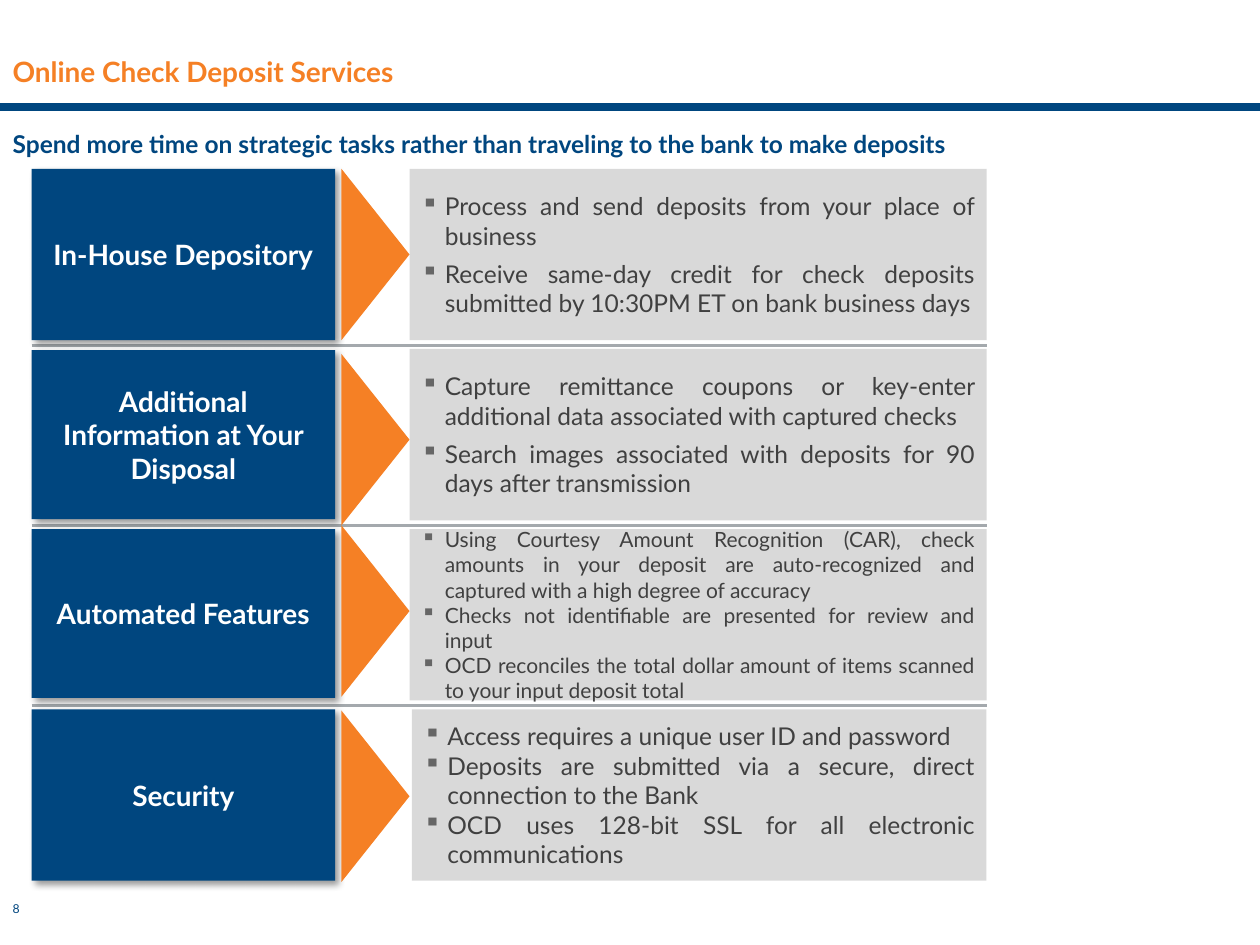
from dataclasses import dataclass

from lxml import etree
from pptx import Presentation
from pptx.dml.color import RGBColor
from pptx.enum import shapes, text
from pptx.oxml import ns
from pptx.util import Inches, Pt


@dataclass(frozen=True)
class Theme:
    font: str = "Lato"
    navy: str = "00467F"
    orange: str = "F58025"
    panel: str = "D9D9D9"
    rule: str = "A4A9AD"
    ink: str = "404040"
    mark: str = "666666"
    white: str = "FFFFFF"
    head: int = 16
    body: int = 14
    dense: int = 12
    note: int = 7


@dataclass(frozen=True)
class Row:
    label: str
    items: tuple
    size: int
    gap: int = 0
    trim: float = 0
    drop: float = 0
    shift: float = 0
    inset: float = 0


THEME = Theme()
TOP, PITCH, TALL = 1.34, 1.43, 1.36
LEFT, RIGHT, WIDE = 0.25, 7.83, 2.41
PANEL, TIP = 3.25, 0.54
ROWS = (
    Row("In-House Depository", (
        "Process and send deposits from your place of business",
        "Receive same-day credit for check deposits submitted by 10:30PM ET on bank business days",
    ), THEME.body, gap=5),
    Row("Additional Information at Your Disposal", (
        "Capture remittance coupons or key-enter additional data associated with captured checks",
        "Search images associated with deposits for 90 days after transmission",
    ), THEME.body, gap=5, trim=0.02, drop=0.01, shift=0.04),
    Row("Automated Features", (
        "Using Courtesy Amount Recognition (CAR), check amounts in your deposit are "
        "auto-recognized and captured with a high degree of accuracy",
        "Checks not identifiable are presented for review and input",
        "OCD reconciles the total dollar amount of items scanned to your input deposit total",
    ), THEME.dense, trim=0.02, shift=-0.03),
    Row("Security", (
        "Access requires a unique user ID and password",
        "Deposits are submitted via a secure, direct connection to the Bank",
        "OCD uses 128-bit SSL for all electronic communications",
    ), THEME.body, shift=0.01, inset=0.02),
)


def box(*sides):
    return [Inches(side) for side in sides]


def tint(name):
    return RGBColor.from_string(name)


def add_run(para, words, size, color, bold=False):
    run = para.add_run()
    run.text = words
    run.font.name = THEME.font
    run.font.size = Pt(size)
    run.font.bold = bold
    run.font.color.rgb = tint(color)


def set_frame(frame, anchor, side=0, edge=0, wrap=True):
    frame.auto_size = text.MSO_AUTO_SIZE.NONE
    frame.word_wrap = wrap
    frame.vertical_anchor = anchor
    frame.margin_left = frame.margin_right = Inches(side)
    frame.margin_top = frame.margin_bottom = Inches(edge)


def add_bullet(para):
    props = para._p.get_or_add_pPr()
    props.set("marL", str(Inches(0.19)))
    props.set("indent", str(-Inches(0.19)))
    color = etree.SubElement(props, ns.qn("a:buClr"))
    etree.SubElement(color, ns.qn("a:srgbClr"), val=THEME.mark)
    etree.SubElement(props, ns.qn("a:buChar"), char="▪")


def add_shadow(shape):
    effects = shape._element.spPr.find(ns.qn("a:effectLst"))
    cast = etree.SubElement(
        effects, ns.qn("a:outerShdw"), blurRad=str(Pt(4)), dist=str(Pt(3)),
        dir=str(45 * 60000), algn="tl", rotWithShape="0")
    color = etree.SubElement(cast, ns.qn("a:srgbClr"), val="000000")
    etree.SubElement(color, ns.qn("a:alpha"), val="40000")


def add_block(slide, kind, sides, fill):
    shape = slide.shapes.add_shape(kind, *box(*sides))
    shape.shadow.inherit = False
    shape.fill.solid()
    shape.fill.fore_color.rgb = tint(fill)
    shape.line.fill.background()
    return shape


def add_rule(slide, start, end, y, color, width):
    line = slide.shapes.add_connector(
        shapes.MSO_CONNECTOR.STRAIGHT, *box(start, y, end, y))
    line.line.color.rgb = tint(color)
    line.line.width = Pt(width)
    etree.SubElement(line._element.spPr, ns.qn("a:effectLst"))


def fill_holder(holder, sides, words, size, color, anchor):
    holder.left, holder.top, holder.width, holder.height = box(*sides)
    set_frame(holder.text_frame, anchor)
    para = holder.text_frame.paragraphs[0]
    props = para._p.get_or_add_pPr()
    props.set("marL", "0")
    props.set("indent", "0")
    etree.SubElement(props, ns.qn("a:buNone"))
    para.alignment = text.PP_ALIGN.LEFT
    para.space_before = Pt(0)
    add_run(para, words, size, color, True)


def add_label(slide, row, top):
    shape = add_block(slide, shapes.MSO_SHAPE.RECTANGLE,
                      (LEFT, top + row.drop, WIDE, TALL - row.trim), THEME.navy)
    add_shadow(shape)
    set_frame(shape.text_frame, text.MSO_ANCHOR.MIDDLE, 0.09, 0.08)
    para = shape.text_frame.paragraphs[0]
    para.alignment = text.PP_ALIGN.CENTER
    add_run(para, row.label, THEME.head, THEME.white, True)


def add_panel(slide, row, top):
    left = PANEL + row.inset
    shape = add_block(slide, shapes.MSO_SHAPE.RECTANGLE,
                      (left, top, RIGHT - left, TALL), THEME.panel)
    frame = shape.text_frame
    set_frame(frame, text.MSO_ANCHOR.MIDDLE, 0.09, 0.08)
    for rank, item in enumerate(row.items):
        para = frame.add_paragraph() if rank else frame.paragraphs[0]
        add_bullet(para)
        para.alignment = text.PP_ALIGN.JUSTIFY
        para.space_before = Pt(row.gap if rank else 0)
        add_run(para, item, row.size, THEME.ink)


def add_arrow(slide, row, top):
    mid = top + TALL / 2 + row.shift
    shape = add_block(slide, shapes.MSO_SHAPE.FLOWCHART_EXTRACT,
                      (PANEL - (TIP + TALL) / 2, mid - TIP / 2, TALL, TIP),
                      THEME.orange)
    shape.rotation = 90


def add_number(slide, words):
    frame = slide.shapes.add_textbox(*box(0.1, 7.14, 0.14, 0.14)).text_frame
    set_frame(frame, text.MSO_ANCHOR.MIDDLE, wrap=False)
    add_run(frame.paragraphs[0], words, THEME.note, THEME.navy)


def main():
    deck = Presentation()
    deck.slide_width, deck.slide_height = box(10, 7.5)
    slide = deck.slides.add_slide(deck.slide_layouts[1])
    fill_holder(slide.shapes.title, (0.1, 0.42, 9.8, 0.29),
                "Online Check Deposit Services",
                THEME.head, THEME.orange, text.MSO_ANCHOR.MIDDLE)
    fill_holder(slide.placeholders[1], (0.1, 1.02, 9.8, 0.23),
                "Spend more time on strategic tasks rather than traveling "
                "to the bank to make deposits",
                THEME.body, THEME.navy, text.MSO_ANCHOR.TOP)
    add_rule(slide, 0, 10, 0.85, THEME.navy, 4.5)
    add_number(slide, "8")
    for rank in range(1, len(ROWS)):
        add_rule(slide, LEFT, RIGHT, TOP + rank * PITCH - 0.03, THEME.rule, 1.5)
    for rank, row in enumerate(ROWS):
        top = TOP + rank * PITCH
        add_label(slide, row, top)
        add_panel(slide, row, top)
        add_arrow(slide, row, top)
    deck.save("out.pptx")


if __name__ == "__main__":
    main()
